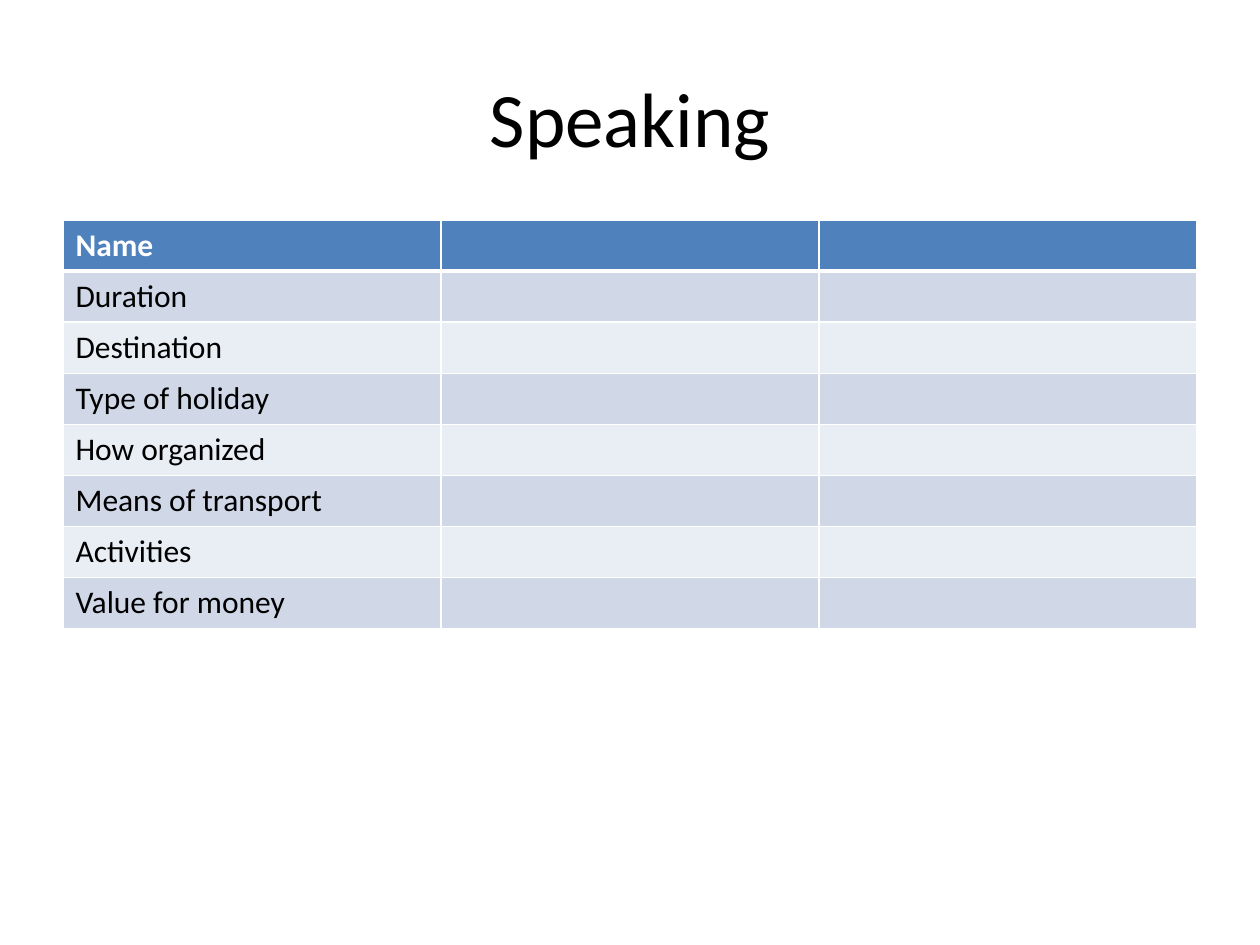
"""Build the Speaking slide with its holiday comparison table."""
from lxml.etree import SubElement
from pptx import Presentation
from pptx.dml.color import RGBColor
from pptx.enum.text import MSO_ANCHOR, PP_ALIGN
from pptx.oxml.ns import qn
from pptx.util import Pt

TITLE = "Speaking"
TOPICS = ["Name", "Duration", "Destination", "Type of holiday", "How organized",
          "Means of transport", "Activities", "Value for money"]
COLUMNS = 3
COLORS = {"text": "000000", "light": "FFFFFF", "header": "4F81BD",
          "odd": "D0D8E8", "even": "E9EDF4"}
FONT = "Calibri"
PX = 914400 // 126
SLIDE_SIZE = (1260, 945)
TITLE_BOX = (63, 38, 1134, 158)
TABLE_LEFT, TABLE_TOP, COLUMN_WIDTH, ROW_HEIGHT = 63, 220, 378, 51


def px(*lengths):
    return [length * PX for length in lengths]


def style_font(font, size, color, bold=False):
    font.name, font.size, font.bold = FONT, Pt(size), bold
    font.color.rgb = RGBColor.from_string(COLORS[color])


def set_borders(cell, widths):
    properties = cell._tc.get_or_add_tcPr()
    for index, (side, width) in enumerate(widths.items()):
        line = SubElement(properties, qn(f"a:ln{side}"), w=str(Pt(width)))
        fill = SubElement(line, qn("a:solidFill"))
        SubElement(fill, qn("a:srgbClr"), val=COLORS["light"])
        properties.insert(index, line)


def add_title(slide):
    title = slide.shapes.title
    title.left, title.top, title.width, title.height = px(*TITLE_BOX)
    frame = title.text_frame
    frame.text = TITLE
    frame.vertical_anchor = MSO_ANCHOR.MIDDLE
    paragraph = frame.paragraphs[0]
    paragraph.alignment = PP_ALIGN.CENTER
    style_font(paragraph.runs[0].font, 44, "text")


def add_topic_table(slide):
    size = px(COLUMN_WIDTH * COLUMNS, ROW_HEIGHT * len(TOPICS))
    table = slide.shapes.add_table(len(TOPICS), COLUMNS,
                                   *px(TABLE_LEFT, TABLE_TOP), *size).table
    for row, topic in enumerate(TOPICS):
        header = row == 0
        color = "header" if header else ("even", "odd")[row % 2]
        widths = {"L": 1, "R": 1, "T": 3 if row == 1 else 1, "B": 3 if header else 1}
        for column in range(COLUMNS):
            cell = table.cell(row, column)
            cell.fill.solid()
            cell.fill.fore_color.rgb = RGBColor.from_string(COLORS[color])
            set_borders(cell, widths)
        label = table.cell(row, 0).text_frame
        label.text = topic
        style_font(label.paragraphs[0].runs[0].font, 18,
                   "light" if header else "text", header)


def main():
    presentation = Presentation()
    presentation.slide_width, presentation.slide_height = px(*SLIDE_SIZE)
    slide = presentation.slides.add_slide(presentation.slide_layouts[5])
    add_title(slide)
    add_topic_table(slide)
    presentation.save("out.pptx")


if __name__ == "__main__":
    main()
